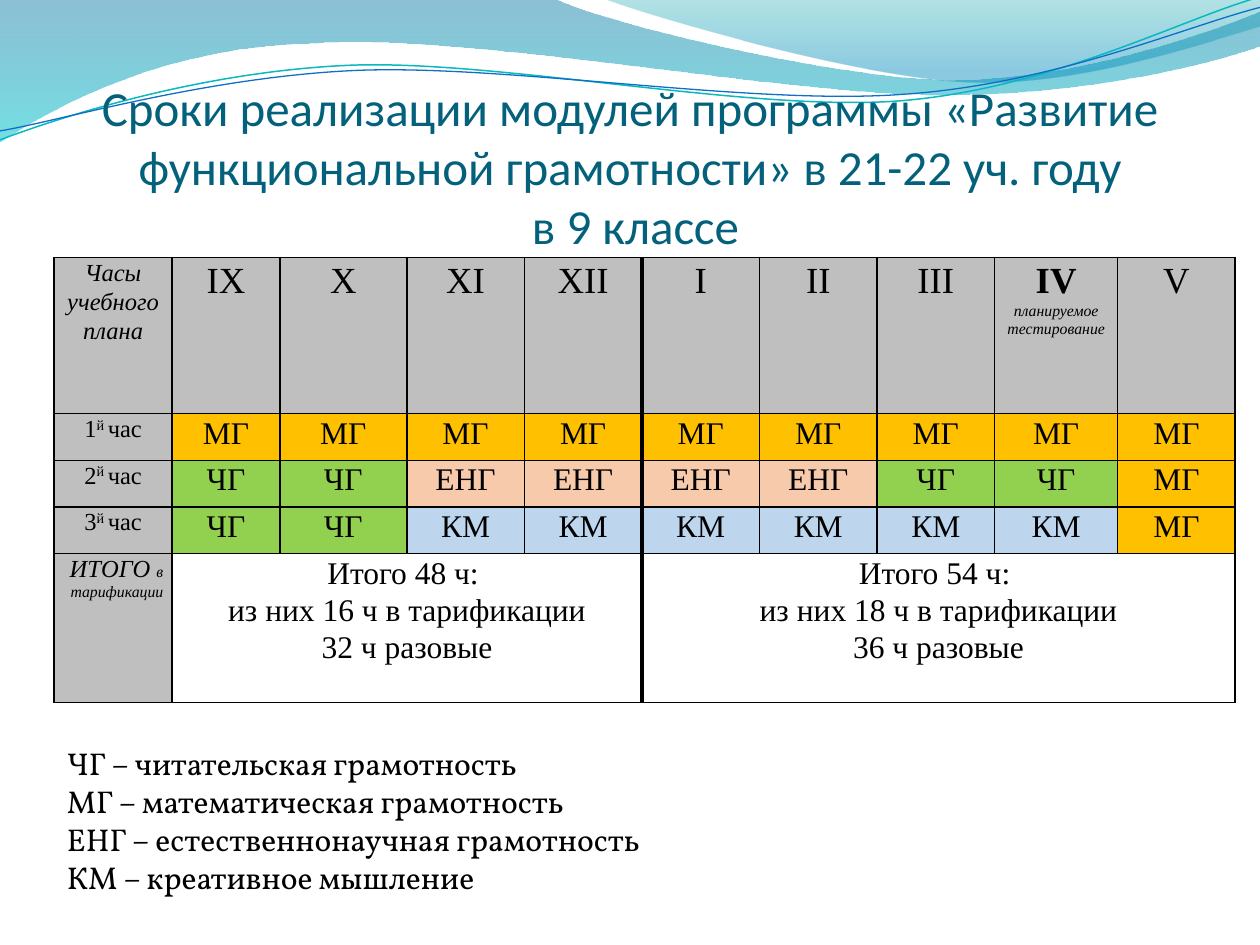
from dataclasses import dataclass

from lxml.etree import SubElement
from pptx import Presentation
from pptx.dml.color import RGBColor
from pptx.enum.text import MSO_ANCHOR, MSO_AUTO_SIZE, PP_ALIGN
from pptx.oxml.ns import qn
from pptx.util import Cm, Pt


@dataclass(frozen=True)
class Theme:
    title: str = "04617B"
    ink: str = "000000"
    paper: str = "FFFFFF"
    head: str = "BFBFBF"
    teal: str = "0AB8BF"
    blue: str = "0F6FC6"
    sans: str = "Calibri"
    serif: str = "Times New Roman"
    text: str = "Vollkorn"
    huge: int = 28
    large: int = 21
    body: int = 18
    small: int = 14
    tiny: int = 9


theme = Theme()
tints = {"МГ": "FFC000", "ЧГ": "92D050", "ЕНГ": "F7CAAC", "КМ": "BDD6EE"}


def style(para, face, size, color=theme.ink, align=PP_ALIGN.CENTER, italic=False):
    para.alignment = align
    for run in para.runs:
        run.font.name = face
        run.font.size = Pt(size)
        run.font.italic = italic
        run.font.color.rgb = RGBColor.from_string(color)


def trace(shapes, start, parts, close):
    """Draw straight parts (2 numbers) and Bezier parts (6 numbers), in cm."""
    dots = [(Cm(part[i]), Cm(part[i + 1]))
            for part in parts for i in range(0, len(part), 2)]
    pen = shapes.build_freeform(Cm(start[0]), Cm(start[1]))
    pen.add_line_segments(dots, close=close)
    shape = pen.convert_to_shape()
    shape.shadow.inherit = False
    # Join each three steps of a Bezier part into one curve
    steps = iter(list(shape._element.iter(qn("a:lnTo"))))
    for part in parts:
        step = next(steps)
        if len(part) == 6:
            step.addprevious(curve := step.makeelement(qn("a:cubicBezTo"), {}))
            for node in (step, next(steps), next(steps)):
                curve.append(node[0])
                node.getparent().remove(node)
    return shape


deck = Presentation()
deck.slide_width, deck.slide_height = Cm(25.4), Cm(19.05)
slide = deck.slides.add_slide(deck.slide_layouts[6])
shapes = slide.shapes

# Filled waves: start, parts, gradient stops (place, colour, opacity)
waves = [
    ((0, 0),
     [(11.18, -0.03), (12.09, 0.43, 16.87, 1.6, 19.25, 1.6),
      (21.67, 1.6, 24.33, 0.66, 25.4, 0.23), (25.43, 0.91),
      (24.97, 1.12, 22.1, 1.93, 18.95, 1.91),
      (15.75, 1.91, 9.7, 0.71, 6.53, 0.86),
      (3.28, 0.91, 1.17, 2.11, -0.03, 2.87)],
     [(0, "0074A1", 45), (1, "00C6CF", 55)]),
    ((12.17, -0.03),
     [(12.93, 0.28, 17.32, 1.57, 19.53, 1.65),
      (21.74, 1.75, 24.41, 0.81, 25.4, 0.53), (25.4, 0)],
     [(0, "00A1A9", 30), (0.8, "008BBF", 45)]),
]
for start, parts, stops in waves:
    wave = trace(shapes, start, parts, True)
    wave.line.fill.background()
    wave.fill.gradient()
    wave.fill.gradient_angle = 270
    for stop, (place, color, alpha) in zip(wave.fill.gradient_stops, stops):
        stop.position = place
        stop.color.rgb = RGBColor.from_string(color)
    marks = wave._element.spPr.iter(qn("a:srgbClr"))
    for mark, (place, color, alpha) in zip(marks, stops):
        SubElement(mark, qn("a:alpha"), val=str(alpha * 1000))

# Thin wave lines, slightly turned
lines = [
    ((-0.05, 2.22),
     [(1.19, 1.82, 4.02, 1.04, 7.05, 1.05),
      (10.05, 1.07, 15.02, 2.37, 18.08, 2.29),
      (21.13, 2.2, 23.86, 0.91, 25.41, 0.55)], theme.teal, 0.85),
    ((-0.04, 2.04),
     [(1.16, 1.9, 4.17, 1.15, 7.2, 1.16),
      (10.25, 1.18, 15.13, 2.25, 18.19, 2.16),
      (21.22, 2.1, 23.93, 1.06, 25.45, 0.75)], theme.blue, 0.75),
]
for start, parts, color, width in lines:
    line = trace(shapes, start, parts, False)
    line.rotation = 357.3
    line.fill.background()
    line.line.color.rgb = RGBColor.from_string(color)
    line.line.width = Pt(width)

# Title
frame = shapes.add_textbox(Cm(1.27), Cm(1.96), Cm(22.86), Cm(3.17)).text_frame
frame.word_wrap = True
frame.vertical_anchor = MSO_ANCHOR.BOTTOM
frame.margin_left = frame.margin_right = frame.margin_bottom = 0
frame.paragraphs[0].text = (
    "Сроки реализации модулей программы «Развитие функциональной "
    "грамотности» в 21-22 уч. году\v в 9 классе")
style(frame.paragraphs[0], theme.sans, theme.huge, theme.title)

# Table grid: a heavy rule parts the two half-years
plan = [
    ["Часы учебного плана", "IX", "X", "XI", "XII", "I", "II", "III",
     "IV\nпланируемое тестирование", "V"],
    ["1"] + ["МГ"] * 9,
    ["2"] + ["ЧГ"] * 2 + ["ЕНГ"] * 4 + ["ЧГ"] * 2 + ["МГ"],
    ["3"] + ["ЧГ"] * 2 + ["КМ"] * 6 + ["МГ"],
    ["ИТОГО ", "Итого 48 ч: \nиз них 16 ч в тарификации\n32 ч разовые", "", "", "",
     "Итого 54 ч: \nиз них 18 ч в тарификации\n36 ч разовые", "", "", "", ""],
]
wide = [2.38, 2.17, 2.56] + [2.37] * 5 + [2.48, 2.37]
high = [3.15, 0.94, 0.94, 0.94, 3]
split, last = 5, len(plan) - 1
grid = shapes.add_table(len(high), len(wide), Cm(1.09), Cm(5.19),
                        Cm(sum(wide)), Cm(sum(high))).table
grid.first_row = grid.horz_banding = False
for col, size in zip(grid.columns, wide):
    col.width = Cm(size)
for row, size in zip(grid.rows, high):
    row.height = Cm(size)
grid.cell(last, 1).merge(grid.cell(last, split - 1))
grid.cell(last, split).merge(grid.cell(last, len(wide) - 1))

# Table cells
for i, row in enumerate(plan):
    for j, words in enumerate(row):
        cell = grid.cell(i, j)
        cell.margin_left = cell.margin_right = Cm(0.18)
        cell.margin_top = cell.margin_bottom = 0
        heavy = {split - 1: "R", split: "L"}.get(j)
        if i == last and j == 1:
            heavy = "R"
        for side in "LRTB":
            edge = SubElement(cell._tc.get_or_add_tcPr(), qn("a:ln" + side),
                              w=str(Pt(3 if side == heavy else 1)))
            paint = SubElement(edge, qn("a:solidFill"))
            SubElement(paint, qn("a:srgbClr"), val=theme.ink)
        if i == last and j > 0:
            cell.fill.background()
        else:
            cell.fill.solid()
            cell.fill.fore_color.rgb = RGBColor.from_string(
                tints.get(words, theme.head))
        if cell.is_spanned:
            continue
        cell.text_frame.text = words
        size = theme.small if j == 0 else theme.large if i == 0 else theme.body
        for para in cell.text_frame.paragraphs:
            para.line_spacing = 1.07
            style(para, theme.serif, size, italic=j == 0 and i in (0, last))

# Hour labels with a raised ending
for i in range(1, last):
    para = grid.cell(i, 0).text_frame.paragraphs[0]
    for words in ("й ", "час"):
        para.add_run().text = words
    style(para, theme.serif, theme.small)
    para.runs[1]._r.get_or_add_rPr().set("baseline", "30000")

# Small notes in the test month and the total label
month, note = grid.cell(0, 8).text_frame.paragraphs
month.runs[0].font.bold = True
style(note, theme.serif, theme.tiny, italic=True)
total = grid.cell(last, 0).text_frame.paragraphs[0]
total.add_run().text = "в тарификации"
style(total, theme.serif, theme.small, align=PP_ALIGN.RIGHT, italic=True)
total.runs[1].font.size = Pt(theme.tiny)

# Key to the codes
frame = shapes.add_textbox(Cm(1.1), Cm(14.88), Cm(12.7), Cm(3.33)).text_frame
frame.word_wrap = True
frame.auto_size = MSO_AUTO_SIZE.SHAPE_TO_FIT_TEXT
frame.text = ("ЧГ – читательская грамотность\nМГ – математическая грамотность\n"
              "ЕНГ – естественнонаучная грамотность\nКМ – креативное мышление")
for para in frame.paragraphs:
    style(para, theme.text, theme.body, align=PP_ALIGN.LEFT)

deck.save("out.pptx")
